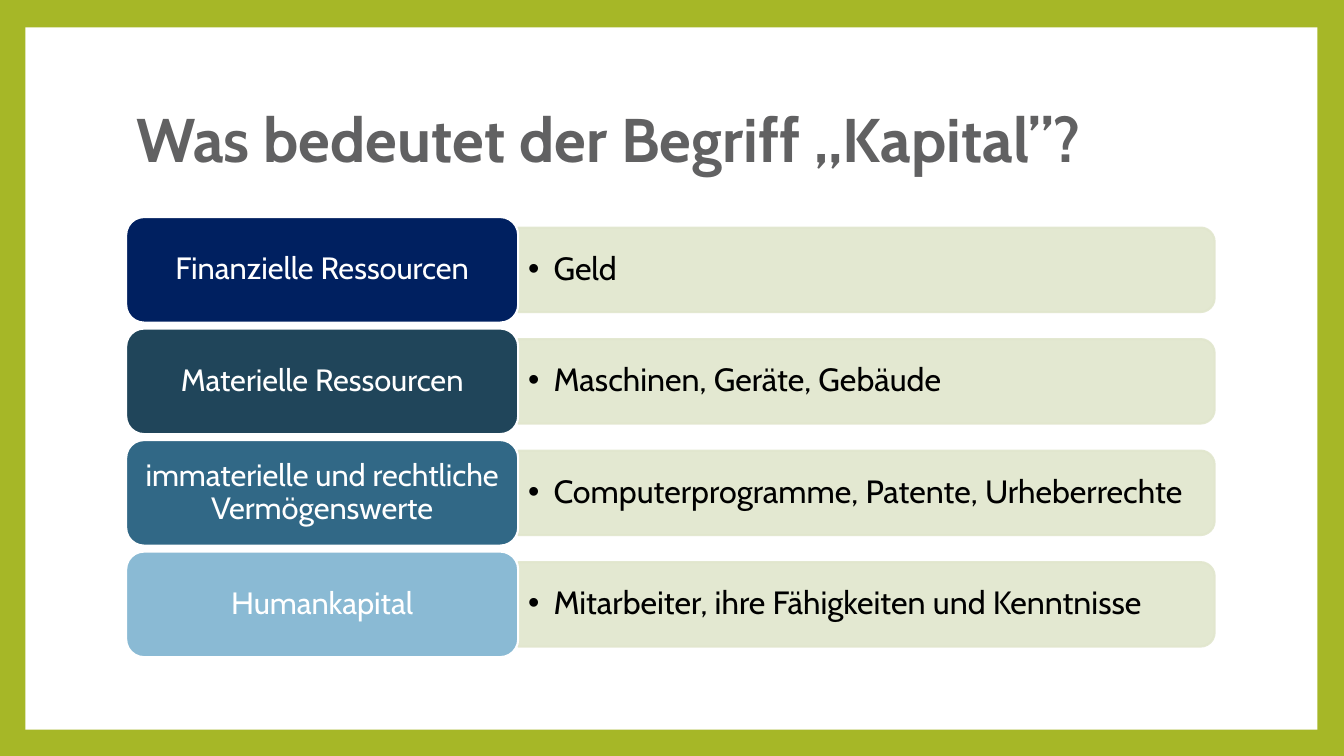
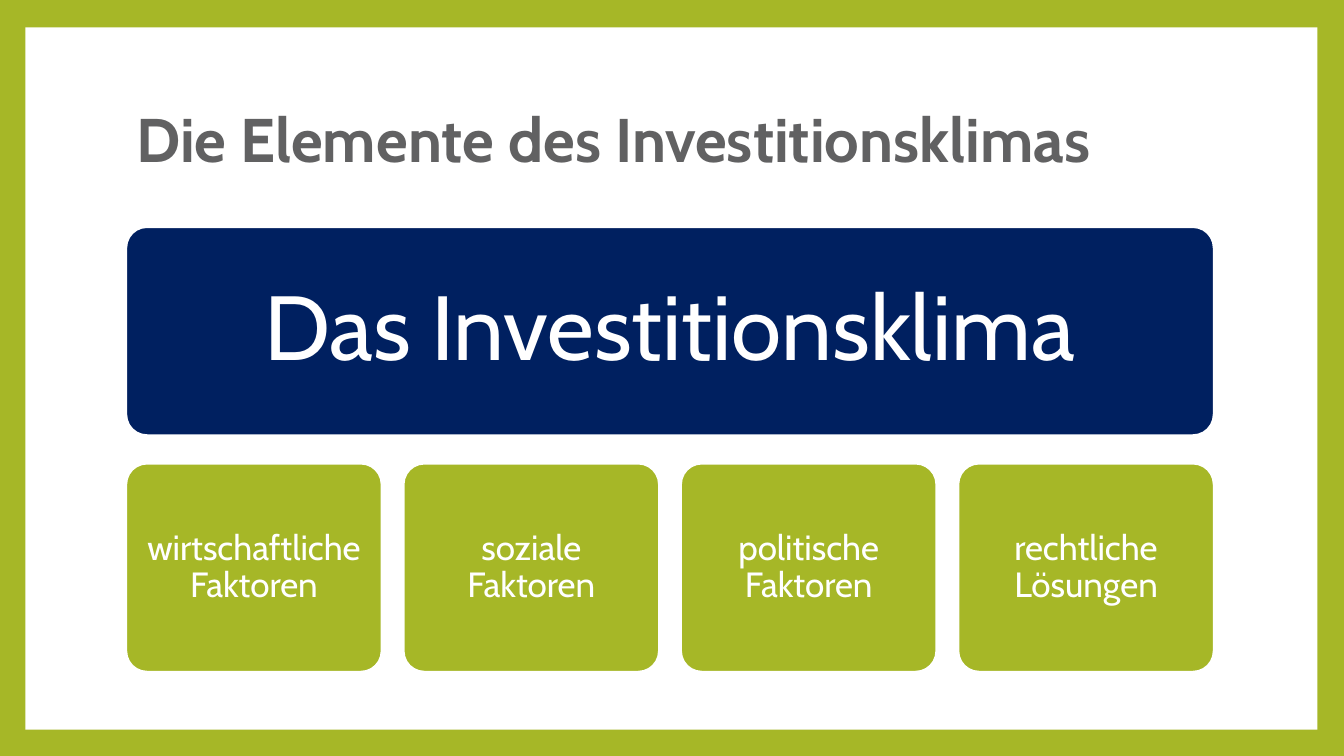
"""Build two slides on capital and the investment climate."""
from dataclasses import dataclass

from lxml import etree
from pptx import Presentation
from pptx import util as u
from pptx.dml.color import RGBColor
from pptx.enum import shapes, text
from pptx.oxml import ns


@dataclass(frozen=True)
class Theme:
    """Colours, type sizes and font of the deck."""
    font: str = "Cabin"
    lime: str = "A6B727"
    white: str = "FFFFFF"
    black: str = "000000"
    grey: str = "616162"
    navy: str = "002060"
    slate: str = "20455A"
    steel: str = "316886"
    sky: str = "8ABAD4"
    pale: str = "E1E6CD"
    title: int = 44
    hero: int = 65
    card: int = 25
    label: int = 22
    item: int = 23
    edge: float = 1.5
    alpha: int = 90


@dataclass(frozen=True)
class Box:
    """A rectangle in centimetres."""
    x: float
    y: float
    w: float
    h: float

    def lens(self) -> tuple:
        """Return left, top, width and height as lengths."""
        return u.Cm(self.x), u.Cm(self.y), u.Cm(self.w), u.Cm(self.h)


@dataclass(frozen=True)
class Row:
    """A kind of capital with its examples."""
    label: str
    item: str
    fill: str


T = Theme()
LEFT, WIDTH = 3.18, 27.41
ROWS = (
    Row("Finanzielle Ressourcen", "Geld", T.navy),
    Row("Materielle Ressourcen", "Maschinen, Geräte, Gebäude", T.slate),
    Row("immaterielle und rechtliche Vermögenswerte",
        "Computerprogramme, Patente, Urheberrechte", T.steel),
    Row("Humankapital", "Mitarbeiter, ihre Fähigkeiten und Kenntnisse", T.sky),
)
CARDS = ("wirtschaftliche Faktoren", "soziale Faktoren",
         "politische Faktoren", "rechtliche Lösungen")


def write(frame, words: str, size: int, color: str, inset: float = 0.25,
          align=text.PP_ALIGN.LEFT, bold: bool = False, bullet: bool = False) -> None:
    """Fill a text frame with one vertically centred paragraph."""
    frame.word_wrap = True
    frame.auto_size = text.MSO_AUTO_SIZE.NONE
    frame.vertical_anchor = text.MSO_ANCHOR.MIDDLE
    frame.margin_left = frame.margin_right = u.Cm(inset)
    frame.margin_top = frame.margin_bottom = u.Cm(0.13)
    frame.text = words
    para = frame.paragraphs[0]
    para.alignment, para.line_spacing = align, 0.9
    if bullet:
        props = para._p.get_or_add_pPr()
        props.set("marL", str(u.Cm(0.64)))
        props.set("indent", str(u.Cm(-0.64)))
        etree.SubElement(props, ns.qn("a:buFont"), typeface="Arial")
        etree.SubElement(props, ns.qn("a:buChar"), char="•")
    font = para.font
    font.name, font.size, font.bold = T.font, u.Pt(size), bold
    font.color.rgb = RGBColor.from_string(color)


def shade(slide, kind, box: Box, fill: str, line: str):
    """Add a flat shape with a fill and an outline."""
    shape = slide.shapes.add_shape(kind, *box.lens())
    shape.shadow.inherit = False
    shape.fill.solid()
    shape.fill.fore_color.rgb = RGBColor.from_string(fill)
    shape.line.color.rgb = RGBColor.from_string(line)
    shape.line.width = u.Pt(T.edge)
    return shape


def tile(slide, box: Box, fill: str, words: str, size: int,
         inset: float = 0.25, round_by: float = 0.1) -> None:
    """Add a rounded tile with centred white text."""
    shape = shade(slide, shapes.MSO_SHAPE.ROUNDED_RECTANGLE, box, fill, T.white)
    shape.adjustments[0] = round_by
    write(shape.text_frame, words, size, T.white, inset, text.PP_ALIGN.CENTER)


def bar(slide, box: Box, words: str) -> None:
    """Add a pale bar, rounded on the right, with a bullet."""
    turned = Box(box.x + (box.w - box.h) / 2, box.y + (box.h - box.w) / 2, box.h, box.w)
    shape = shade(slide, shapes.MSO_SHAPE.ROUND_2_SAME_RECTANGLE, turned, T.pale, T.pale)
    shape.rotation = 90
    for color in shape.element.iter(ns.qn("a:srgbClr")):
        etree.SubElement(color, ns.qn("a:alpha"), val=str(T.alpha * 1000))
    note = slide.shapes.add_textbox(*box.lens())
    write(note.text_frame, words, T.item, T.black, bullet=True)


def start(deck, words: str):
    """Add a slide with its title."""
    slide = deck.slides.add_slide(deck.slide_layouts[5])
    title = slide.shapes.title
    title.left, title.top, title.width, title.height = Box(LEFT, 1.7, 27.43, 3.76).lens()
    write(title.text_frame, words, T.title, T.grey, bold=True)
    return slide


def dress(deck, slide) -> None:
    """Give the master its lime ground and white panel."""
    master = deck.slide_master
    master.background.fill.solid()
    master.background.fill.fore_color.rgb = RGBColor.from_string(T.lime)
    panel = shade(slide, shapes.MSO_SHAPE.RECTANGLE,
                  Box(0.64, 0.69, 32.56, 17.7), T.white, T.white)
    panel.line.fill.background()
    panel.element.nvSpPr.cNvPr.set("id", "100")
    master.shapes.element.insert(2, panel.element)


def main() -> None:
    """Build and save the deck."""
    deck = Presentation()
    deck.slide_width, deck.slide_height = u.Cm(33.87), u.Cm(19.05)

    slide = start(deck, "Was bedeutet der Begriff „Kapital”?")
    dress(deck, slide)
    wide, high, thin, step = 9.88, 2.66, 2.13, 2.81
    for i, row in enumerate(ROWS):
        top = 5.47 + i * step
        bar(slide, Box(LEFT + wide, top + (high - thin) / 2, 17.55, thin), row.item)
        tile(slide, Box(LEFT, top, wide, high), row.fill, row.label, T.label,
             round_by=0.17)

    slide = start(deck, "Die Elemente des Investitionsklimas")
    tall, gap = 5.25, 0.55
    tile(slide, Box(LEFT, 5.72, WIDTH, tall), T.navy, "Das Investitionsklima",
         T.hero, 0.69)
    wide = (WIDTH - gap * (len(CARDS) - 1)) / len(CARDS)
    for i, words in enumerate(CARDS):
        tile(slide, Box(LEFT + i * (wide + gap), 11.68, wide, tall),
             T.lime, words, T.card)

    deck.save("out.pptx")


if __name__ == "__main__":
    main()
